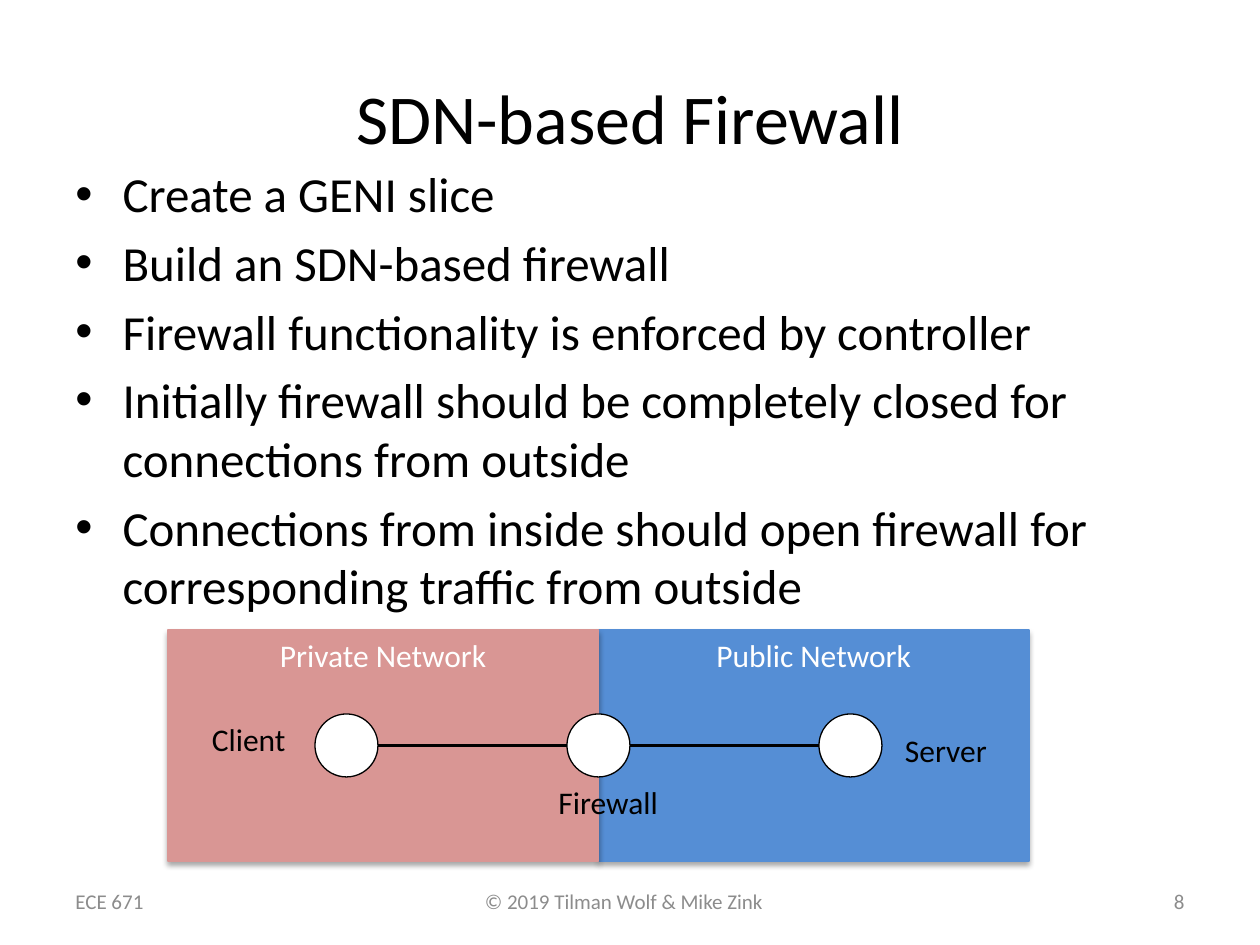
from lxml.etree import SubElement
from pptx import Presentation
from pptx.dml.color import RGBColor
from pptx.enum.shapes import MSO_CONNECTOR, MSO_SHAPE
from pptx.enum.text import MSO_ANCHOR, PP_ALIGN
from pptx.oxml import parse_xml
from pptx.oxml.ns import nsdecls, qn
from pptx.util import Pt

BLACK = RGBColor(0x00, 0x00, 0x00)
WHITE = RGBColor(0xFF, 0xFF, 0xFF)
GRAY = RGBColor(0x8C, 0x8C, 0x8C)
RED = RGBColor(0xD9, 0x96, 0x94)
BLUE = RGBColor(0x55, 0x8E, 0xD5)
FONT = "Calibri"

TITLE = "SDN-based Firewall"
BULLETS = [
    "Create a GENI slice",
    "Build an SDN-based firewall",
    "Firewall functionality is enforced by controller",
    "Initially firewall should be completely closed for connections from outside",
    "Connections from inside should open firewall for corresponding traffic from outside",
]
# text, (left, top, width, height), alignment, anchor, wrap
FOOTERS = [
    ("© 2019 Tilman Wolf & Mike Zink", (270, 504, 176, 36), PP_ALIGN.LEFT, MSO_ANCHOR.TOP, False),
    ("ECE 671", (36, 500.4, 168, 28.8), PP_ALIGN.LEFT, MSO_ANCHOR.MIDDLE, True),
    ("8", (516, 500.4, 168, 28.8), PP_ALIGN.RIGHT, MSO_ANCHOR.MIDDLE, True),
]
# Right-hand zone first, so that the left one lies on top of its shadow
ZONES = [("Public Network", 1, BLUE), ("Private Network", 0, RED)]
ZONE_LEFT, ZONE_TOP, ZONE_WIDTH, ZONE_HEIGHT = 96, 360, 246, 132
# text, (left, top, width, height)
NODE_LABELS = [
    ("Client", (114, 408, 57.6, 29)),
    ("Server", (510, 414, 62, 29)),
    ("Firewall", (312, 444, 73, 29)),
]
NODE_LEFT, NODE_TOP, NODE_SIZE, NODE_PITCH = 180, 408, 36, 144


def points(box):
    return [Pt(length) for length in box]


def style(paragraph, size, color, align=PP_ALIGN.LEFT):
    paragraph.alignment = align
    paragraph.font.name = FONT
    paragraph.font.size = Pt(size)
    paragraph.font.color.rgb = color


def add_text(slide, text, box, size, color, align=PP_ALIGN.LEFT,
             anchor=MSO_ANCHOR.TOP, wrap=True):
    frame = slide.shapes.add_textbox(*points(box)).text_frame
    frame.word_wrap = wrap
    frame.vertical_anchor = anchor
    frame.text = text
    for paragraph in frame.paragraphs:
        style(paragraph, size, color, align)
    return frame


def add_filled(slide, kind, box, fill, line):
    shape = slide.shapes.add_shape(kind, *points(box))
    shape.shadow.inherit = False
    shape.fill.solid()
    shape.fill.fore_color.rgb = fill
    shape.line.color.rgb = line
    shape.line.width = Pt(0.75)
    return shape


def add_bullet(paragraph):
    paragraph.space_before = Pt(5.6)
    properties = paragraph._p.get_or_add_pPr()
    properties.set("marL", str(Pt(27)))
    properties.set("indent", str(-Pt(27)))
    SubElement(properties, qn("a:buFont"), typeface="Arial")
    SubElement(properties, qn("a:buChar"), char="•")


def add_zone(slide, name, column, color):
    box = (ZONE_LEFT + column * ZONE_WIDTH, ZONE_TOP, ZONE_WIDTH, ZONE_HEIGHT)
    zone = add_filled(slide, MSO_SHAPE.RECTANGLE, box, color, color)
    zone.text_frame.text = name
    zone.text_frame.vertical_anchor = MSO_ANCHOR.TOP
    style(zone.text_frame.paragraphs[0], 18, WHITE, PP_ALIGN.CENTER)
    zone._element.spPr.find(qn("a:effectLst")).append(parse_xml(
        f'<a:outerShdw {nsdecls("a")} blurRad="{Pt(3.1)}" dist="{Pt(1.8)}" '
        'dir="5400000" rotWithShape="0"><a:srgbClr val="000000">'
        '<a:alpha val="35000"/></a:srgbClr></a:outerShdw>'))


def add_link(slide, start, end, y):
    link = slide.shapes.add_connector(MSO_CONNECTOR.STRAIGHT, *points((start, y, end, y)))
    link.line.color.rgb = BLACK
    link.line.width = Pt(2)
    SubElement(link._element.spPr, qn("a:effectLst"))


def main():
    deck = Presentation()
    deck.slide_width, deck.slide_height = Pt(720), Pt(540)
    slide = deck.slides.add_slide(deck.slide_layouts[6])

    for text, box, align, anchor, wrap in FOOTERS:
        add_text(slide, text, box, 12, GRAY, align, anchor, wrap)
    for zone in ZONES:
        add_zone(slide, *zone)

    add_text(slide, TITLE, (36, 21.6, 648, 90), 40, BLACK, PP_ALIGN.CENTER, MSO_ANCHOR.MIDDLE)
    body = add_text(slide, "\n".join(BULLETS), (36, 90, 648, 356.4), 28, BLACK)
    for paragraph in body.paragraphs:
        add_bullet(paragraph)

    node_lefts = [NODE_LEFT + i * NODE_PITCH for i in range(3)]
    for left in node_lefts:
        add_filled(slide, MSO_SHAPE.OVAL, (left, NODE_TOP, NODE_SIZE, NODE_SIZE), WHITE, BLACK)
    for left, following in zip(node_lefts, node_lefts[1:]):
        add_link(slide, left + NODE_SIZE, following, NODE_TOP + NODE_SIZE / 2)
    for text, box in NODE_LABELS:
        add_text(slide, text, box, 18, BLACK, wrap=False)

    deck.save("out.pptx")


if __name__ == "__main__":
    main()
